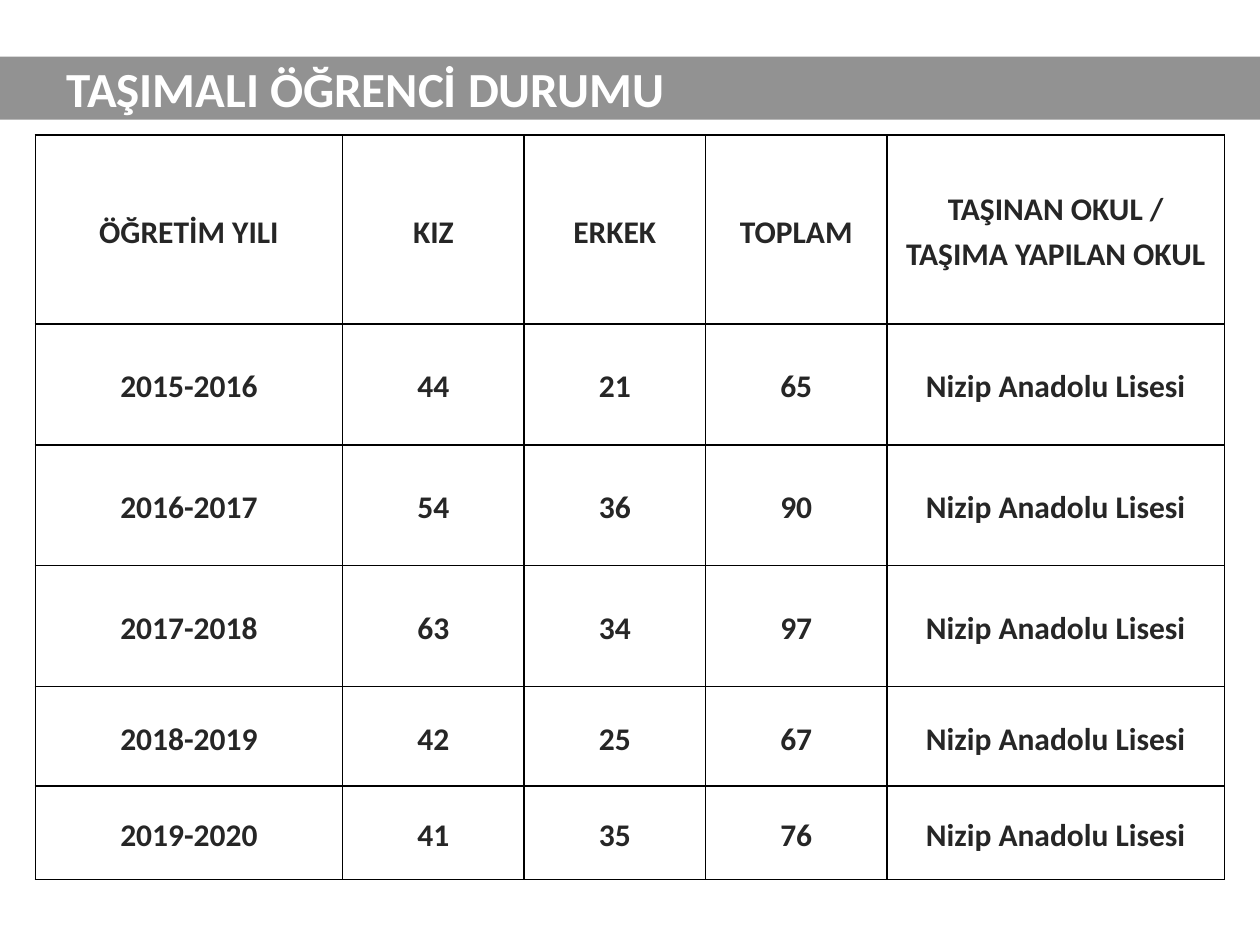
"""Builds the slide on bussed students by school year."""
from lxml import etree
from pptx import Presentation
from pptx.dml.color import RGBColor
from pptx.enum import shapes, text
from pptx.oxml import ns
from pptx.util import Inches, Pt

COLOURS = {"band": "929292", "title": "FFFFFF", "cell": "FFFFFF", "ink": "262626", "border": "000000"}
SCHOOL = "Nizip Anadolu Lisesi"
HEADINGS = ["ÖĞRETİM YILI", "KIZ", "ERKEK", "TOPLAM", "TAŞINAN OKUL / TAŞIMA YAPILAN OKUL"]
COUNTS = [(2015, 44, 21), (2016, 54, 36), (2017, 63, 34), (2018, 42, 25), (2019, 41, 35)]
COLUMN_WIDTHS = [2.44, 1.44, 1.44, 1.44, 2.68]
ROW_HEIGHTS = [1.5, 0.96, 0.96, 0.96, 0.79, 0.74]


def write(para, words, size, colour):
    span = para.add_run()
    span.text = words
    formats = {"name": "Calibri", "size": Pt(size), "bold": True}
    for name, value in formats.items():
        setattr(span.font, name, value)
    span.font.color.rgb = RGBColor.from_string(COLOURS[colour])


def add_borders(cell):
    properties = cell._tc.get_or_add_tcPr()
    for side in ("a:lnL", "a:lnR", "a:lnT", "a:lnB"):
        line = etree.SubElement(properties, ns.qn(side), w=str(Pt(1)))
        fill = etree.SubElement(line, ns.qn("a:solidFill"))
        etree.SubElement(fill, ns.qn("a:srgbClr"), val=COLOURS["border"])


deck = Presentation()
deck.slide_width, deck.slide_height = Inches(10), Inches(7.5)
page = deck.slides.add_slide(deck.slide_layouts[6])

band = page.shapes.add_shape(shapes.MSO_SHAPE.RECTANGLE, 0, Inches(0.45), Inches(10), Inches(0.5))
band.shadow.inherit = False
band.fill.solid()
band.fill.fore_color.rgb = RGBColor.from_string(COLOURS["band"])
band.line.fill.background()
frame_formats = {"margin_left": Inches(0.53), "vertical_anchor": text.MSO_ANCHOR.MIDDLE, "word_wrap": True}
for name, value in frame_formats.items():
    setattr(band.text_frame, name, value)
title = band.text_frame.paragraphs[0]
title.alignment = text.PP_ALIGN.LEFT
write(title, "TAŞIMALI ÖĞRENCİ DURUMU", 28, "title")

rows = [HEADINGS]
for year, girls, boys in COUNTS:
    rows.append([f"{year}-{year + 1}", str(girls), str(boys), str(girls + boys), SCHOOL])

table = page.shapes.add_table(
    len(rows), len(HEADINGS), Inches(0.28), Inches(1.07),
    Inches(sum(COLUMN_WIDTHS)), Inches(sum(ROW_HEIGHTS)),
).table
table.first_row = table.horz_banding = False
for column, width in zip(table.columns, COLUMN_WIDTHS):
    column.width = Inches(width)
for row, height in zip(table.rows, ROW_HEIGHTS):
    row.height = Inches(height)

cell_formats = {
    "margin_left": Inches(0.07), "margin_right": Inches(0.07),
    "margin_top": 0, "margin_bottom": 0,
    "vertical_anchor": text.MSO_ANCHOR.MIDDLE,
}
for row, values in zip(table.rows, rows):
    for cell, words in zip(row.cells, values):
        for name, value in cell_formats.items():
            setattr(cell, name, value)
        add_borders(cell)
        cell.fill.solid()
        cell.fill.fore_color.rgb = RGBColor.from_string(COLOURS["cell"])
        para = cell.text_frame.paragraphs[0]
        para.alignment = text.PP_ALIGN.CENTER
        para.line_spacing = 1.15
        write(para, words, 18, "ink")

deck.save("out.pptx")
